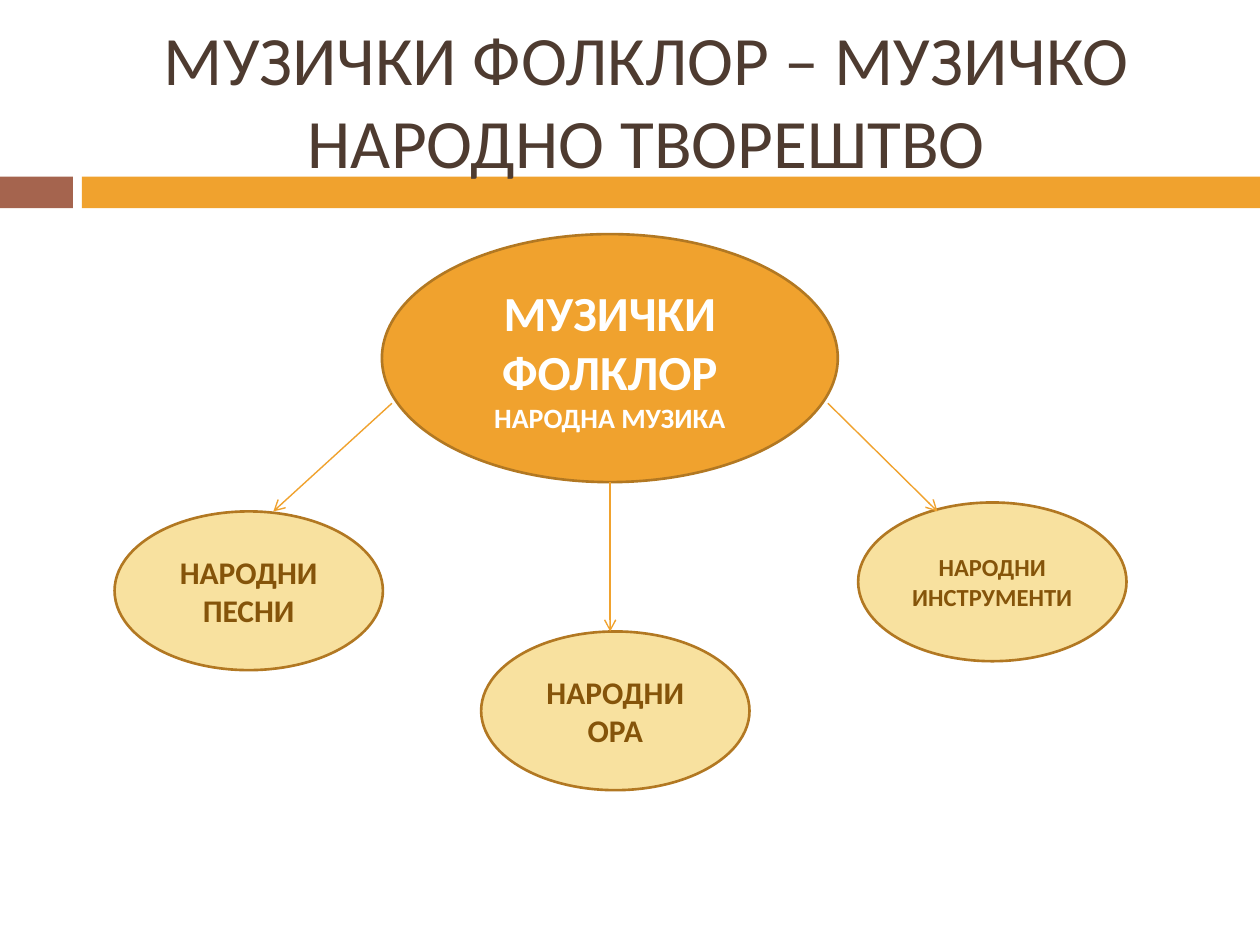
from lxml.etree import SubElement
from pptx import Presentation
from pptx.dml.color import RGBColor
from pptx.enum.shapes import MSO_CONNECTOR as Connector, MSO_SHAPE as Shape
from pptx.enum.text import MSO_ANCHOR as Anchor, PP_ALIGN as Align
from pptx.oxml.ns import qn
from pptx.util import Cm, Pt


def color(hex_code):
    return RGBColor.from_string(hex_code)


def write(frame, lines, hex_code, bold):
    frame.word_wrap = True
    frame.vertical_anchor = Anchor.MIDDLE
    for index, (text, size) in enumerate(lines):
        paragraph = frame.add_paragraph() if index else frame.paragraphs[0]
        paragraph.alignment = Align.CENTER
        run = paragraph.add_run()
        run.text = text
        run.font.name = "Calibri"
        run.font.size = Pt(size)
        run.font.bold = bold
        run.font.color.rgb = color(hex_code)


prs = Presentation()
prs.slide_width, prs.slide_height = Cm(25.4), Cm(19.05)
slide = prs.slides.add_slide(prs.slide_layouts[6])

for left, width, fill in [(0, 1.47, "A5644E"), (1.65, 23.75, "F0A22E")]:
    band = slide.shapes.add_shape(Shape.RECTANGLE, Cm(left), Cm(3.56), Cm(width), Cm(0.64))
    band.shadow.inherit = False
    band.fill.solid()
    band.fill.fore_color.rgb = color(fill)
    band.line.fill.background()

title = slide.shapes.add_textbox(Cm(1.7), Cm(0.64), Cm(22.66), Cm(2.74))
write(title.text_frame, [("МУЗИЧКИ ФОЛКЛОР – МУЗИЧКО НАРОДНО ТВОРЕШТВО", 39.6)], "4E3B30", False)

folklore = [("МУЗИЧКИ ФОЛКЛОР", 28), ("НАРОДНА МУЗИКА", 16)]
branch_size = (5.41, 3.2)
topics = [
    (7.7, 4.72, (9.19, 5), "F0A22E", "FFFFFF", folklore),
    (9.7, 12.73, branch_size, "F8E19F", "85540A", [("НАРОДНИ ОРА", 18)]),
    (17.3, 10.13, branch_size, "F8E19F", "85540A", [("НАРОДНИ ИНСТРУМЕНТИ", 14)]),
    (2.31, 10.31, branch_size, "F8E19F", "85540A", [("НАРОДНИ ПЕСНИ", 18)]),
]
for left, top, (width, height), fill, ink, lines in topics:
    topic = slide.shapes.add_shape(Shape.OVAL, Cm(left), Cm(top), Cm(width), Cm(height))
    topic.shadow.inherit = False
    topic.fill.solid()
    topic.fill.fore_color.rgb = color(fill)
    topic.line.color.rgb = color("B27822")
    topic.line.width = Pt(1.5)
    write(topic.text_frame, lines, ink, True)

branches = [(12.3, 9.72, 12.3, 12.73), (16.69, 8.13, 18.9, 10.31), (7.9, 8.13, 5.51, 10.31)]
for ends in branches:
    branch = slide.shapes.add_connector(Connector.STRAIGHT, *[Cm(end) for end in ends])
    branch.line.color.rgb = color("F0A22E")
    branch.line.width = Pt(0.79)
    SubElement(branch.line._get_or_add_ln(), qn("a:tailEnd"), type="arrow")
    SubElement(branch._element.spPr, qn("a:effectLst"))

prs.save("out.pptx")
